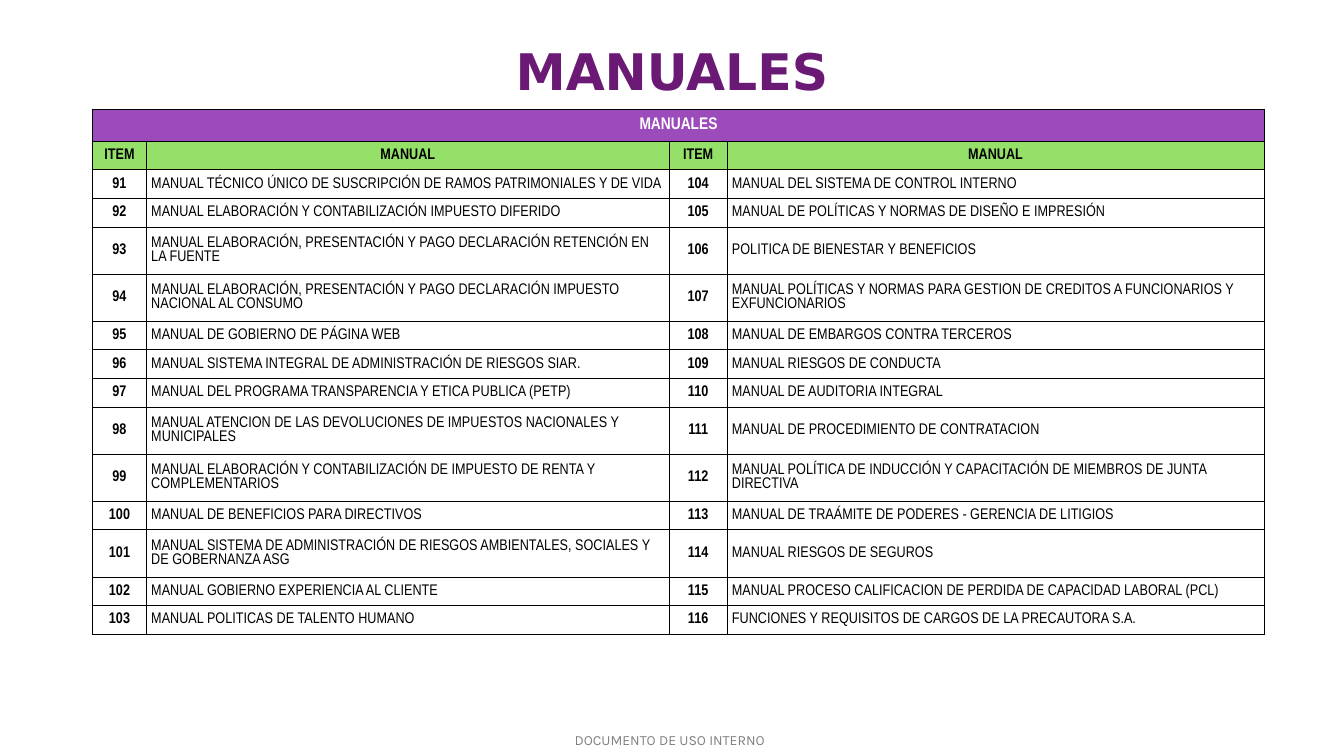
from dataclasses import dataclass
from lxml.etree import SubElement as Sub
from pptx import Presentation
from pptx.dml.color import RGBColor as RGB
from pptx.enum.text import MSO_ANCHOR as Anchor, MSO_AUTO_SIZE as Auto, PP_ALIGN as Align
from pptx.oxml.ns import qn
from pptx.util import Inches, Pt

# Content
TITLE = "MANUALES"
FOOT = "DOCUMENTO DE USO INTERNO"
HEADS = ("ITEM", "MANUAL")
FIRST = 91
LEFT = [
    "MANUAL TÉCNICO ÚNICO DE SUSCRIPCIÓN DE RAMOS PATRIMONIALES Y DE VIDA",
    "MANUAL ELABORACIÓN Y CONTABILIZACIÓN IMPUESTO DIFERIDO",
    "MANUAL ELABORACIÓN, PRESENTACIÓN Y PAGO DECLARACIÓN RETENCIÓN EN LA FUENTE",
    "MANUAL ELABORACIÓN, PRESENTACIÓN Y PAGO DECLARACIÓN IMPUESTO NACIONAL AL CONSUMO",
    "MANUAL DE GOBIERNO DE PÁGINA WEB",
    "MANUAL SISTEMA INTEGRAL DE ADMINISTRACIÓN DE RIESGOS SIAR.",
    "MANUAL DEL PROGRAMA TRANSPARENCIA Y ETICA PUBLICA (PETP)",
    "MANUAL ATENCION DE LAS DEVOLUCIONES DE IMPUESTOS NACIONALES Y MUNICIPALES",
    "MANUAL ELABORACIÓN Y CONTABILIZACIÓN DE IMPUESTO DE RENTA Y COMPLEMENTARIOS",
    "MANUAL DE BENEFICIOS PARA DIRECTIVOS",
    "MANUAL SISTEMA DE ADMINISTRACIÓN DE RIESGOS AMBIENTALES, SOCIALES Y DE GOBERNANZA ASG",
    "MANUAL GOBIERNO EXPERIENCIA AL CLIENTE",
    "MANUAL POLITICAS DE TALENTO HUMANO",
]
RIGHT = [
    "MANUAL DEL SISTEMA DE CONTROL INTERNO",
    "MANUAL DE POLÍTICAS Y NORMAS DE DISEÑO E IMPRESIÓN",
    "POLITICA DE BIENESTAR Y BENEFICIOS",
    "MANUAL POLÍTICAS Y NORMAS PARA GESTION DE CREDITOS A FUNCIONARIOS Y EXFUNCIONARIOS",
    "MANUAL DE EMBARGOS CONTRA TERCEROS",
    "MANUAL RIESGOS DE CONDUCTA",
    "MANUAL DE AUDITORIA INTEGRAL",
    "MANUAL DE PROCEDIMIENTO DE CONTRATACION",
    "MANUAL POLÍTICA DE INDUCCIÓN Y CAPACITACIÓN DE MIEMBROS DE JUNTA DIRECTIVA",
    "MANUAL DE TRAÁMITE DE PODERES - GERENCIA DE LITIGIOS",
    "MANUAL RIESGOS DE SEGUROS",
    "MANUAL PROCESO CALIFICACION DE PERDIDA DE CAPACIDAD LABORAL (PCL)",
    "FUNCIONES Y REQUISITOS DE CARGOS DE LA PRECAUTORA S.A.",
]


@dataclass(frozen=True)
class Theme:
    ink: str = "000000"
    white: str = "FFFFFF"
    plum: str = "6A1A75"
    band: str = "9B4CBA"
    green: str = "95E069"
    face: str = "Arial Narrow"
    bold: str = "DejaVu Sans"
    foot: str = "Karla"
    big: int = 36
    head: int = 12
    body: int = 11
    small: int = 10


T = Theme()

# Grid, in inches
WIDE, HIGH = 13.33, 7.5
COLS = (0.53, 5.19, 0.57, 5.33)
BAND, ROW, LINE = 0.32, 0.28, 0.18
FULL = 70  # letters that fit on one line
PAD = 0.05


def write(frame, text, face, size, color, bold=False, align=None):
    par = frame.paragraphs[0]
    if align is not None:
        par.alignment = align
    run = par.add_run()
    run.text = text
    run.font.name, run.font.size, run.font.bold = face, Pt(size), bold
    run.font.color.rgb = RGB.from_string(color)
    return run


def box(slide, x, y, w, h, pad):
    frame = slide.shapes.add_textbox(*map(Inches, (x, y, w, h))).text_frame
    frame.margin_left = frame.margin_right = Inches(pad)
    frame.margin_top = frame.margin_bottom = Inches(pad)
    return frame


def edge(cell):
    props = cell._tc.get_or_add_tcPr()
    for side in ("lnL", "lnR", "lnT", "lnB"):
        line = Sub(props, qn(f"a:{side}"), w=str(Pt(0.5)))
        Sub(Sub(line, qn("a:solidFill")), qn("a:srgbClr"), val=T.ink)


def style(cell, fill=None, pad=PAD):
    cell.vertical_anchor = Anchor.MIDDLE
    cell.margin_left = cell.margin_right = Inches(pad)
    cell.margin_top = cell.margin_bottom = Inches(pad)
    edge(cell)
    if fill:
        cell.fill.solid()
        cell.fill.fore_color.rgb = RGB.from_string(fill)
    else:
        cell.fill.background()


def main():
    deck = Presentation()
    deck.slide_width, deck.slide_height = Inches(WIDE), Inches(HIGH)
    slide = deck.slides.add_slide(deck.slide_layouts[6])

    # Footer
    frame = box(slide, 5.7, 7.26, 1.95, 0.17, 0)
    frame.word_wrap, frame.auto_size = False, Auto.SHAPE_TO_FIT_TEXT
    run = write(frame, FOOT, T.foot, T.small, T.ink)
    tint = run._r.find(".//" + qn("a:srgbClr"))
    Sub(tint, qn("a:alpha"), val="50000")

    # Title
    frame = box(slide, 1.23, 0.32, 10.87, 0.76, 0.08)
    frame.word_wrap = True
    write(frame, TITLE, T.bold, T.big, T.plum, True, Align.CENTER)

    # Table size: long names take a second line
    pairs = list(zip(LEFT, RIGHT))
    rows = [BAND, ROW] + [ROW + LINE * (max(map(len, p)) > FULL) for p in pairs]
    grid = slide.shapes.add_table(
        len(rows), len(COLS), Inches(0.92), Inches(1.08),
        Inches(sum(COLS)), Inches(sum(rows))).table
    for col, w in zip(grid.columns, COLS):
        col.width = Inches(w)
    for row, h in zip(grid.rows, rows):
        row.height = Inches(h)

    # Band across the top
    for c in range(len(COLS)):
        style(grid.cell(0, c), T.band, 0.01)
    top = grid.cell(0, 0)
    top.merge(grid.cell(0, len(COLS) - 1))
    write(top.text_frame, TITLE, T.face, T.head, T.white, True, Align.CENTER)

    # Column heads and entries
    lines = [HEADS * 2]
    for i, (a, b) in enumerate(pairs, FIRST):
        lines.append((str(i), a, str(i + len(LEFT)), b))
    for r, line in enumerate(lines, 1):
        for c, text in enumerate(line):
            cell = grid.cell(r, c)
            style(cell, T.green if r == 1 else None)
            key = r == 1 or c % 2 == 0
            write(cell.text_frame, text, T.face, T.body, T.ink, key,
                  Align.CENTER if key else Align.LEFT)

    deck.save("out.pptx")


if __name__ == "__main__":
    main()
